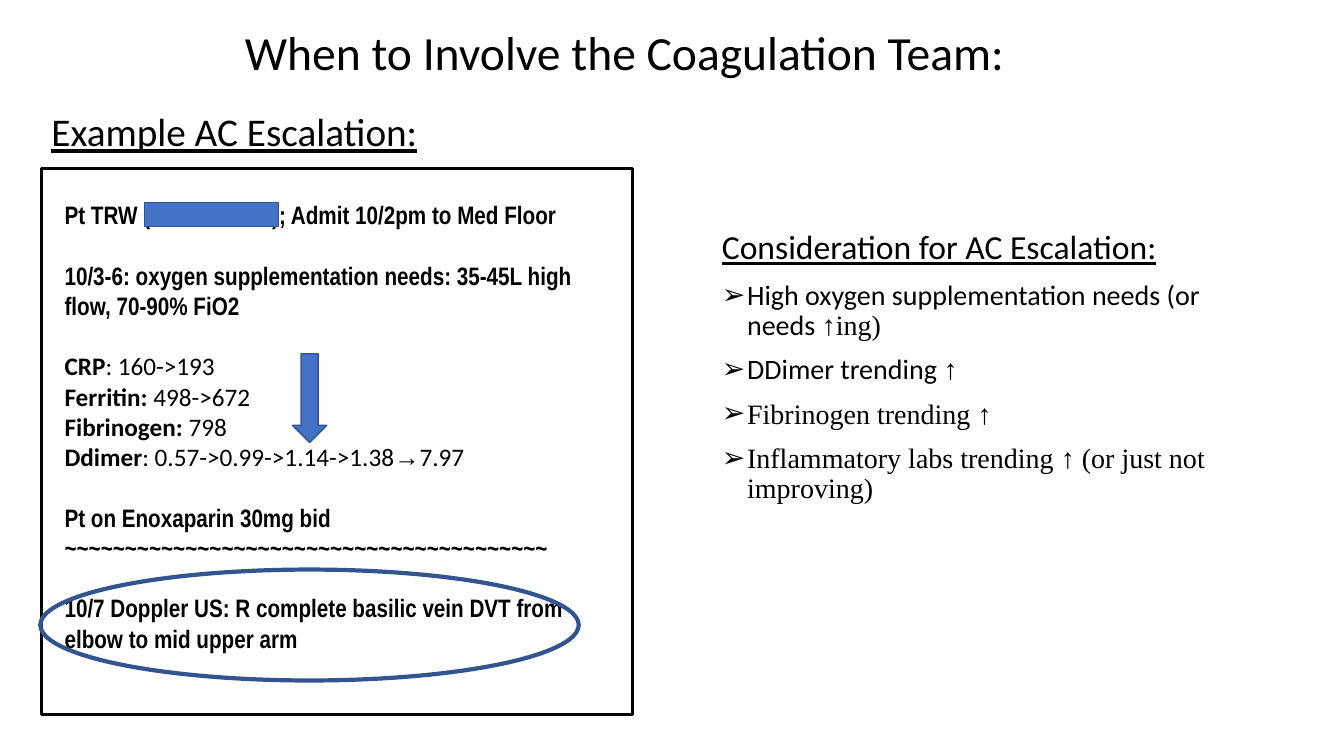
from dataclasses import dataclass

from lxml.etree import SubElement
from pptx import Presentation
from pptx.dml.color import RGBColor as RGB
from pptx.enum.shapes import MSO_SHAPE as SHAPE
from pptx.enum.text import MSO_ANCHOR as ANCHOR, MSO_AUTO_SIZE as AUTO, PP_ALIGN as ALIGN
from pptx.oxml.ns import qn
from pptx.util import Inches, Pt


@dataclass(frozen=True)
class Theme:
    ink: RGB = RGB(0, 0, 0)
    accent: RGB = RGB(0x44, 0x72, 0xC4)
    edge: RGB = RGB(0x32, 0x54, 0x91)
    sans: str = "Calibri"
    narrow: str = "Arial Narrow"
    arial: str = "Arial"
    serif: str = "Times New Roman"
    headline: int = 34
    title: int = 28
    subhead: int = 24
    bullet: int = 20
    note: int = 18


T = Theme()
WIDTH, HEIGHT = Inches(13.33), Inches(7.5)


@dataclass(frozen=True)
class Box:
    """Area in percent of the slide's width and height."""
    x: float
    y: float
    w: float
    h: float

    def inner(self, dx, dy, w, h):
        return Box(self.x + dx, self.y + dy, w, h)

    def emu(self):
        return (int(WIDTH * self.x / 100), int(HEIGHT * self.y / 100),
                int(WIDTH * self.w / 100), int(HEIGHT * self.h / 100))


# Helpers
def assign(obj, **values):
    for name, value in values.items():
        setattr(obj, name, value)


def move(sp, box):
    assign(sp, **dict(zip(("left", "top", "width", "height"), box.emu())))


def add_run(p, text, size, name=T.sans, **font):
    r = p.add_run()
    r.text = text
    assign(r.font, size=Pt(size), name=name, **font)
    r.font.color.rgb = T.ink


def add_text_box(s, box):
    sp = s.shapes.add_textbox(*box.emu())
    pad = Inches(0.05)
    assign(sp.text_frame, word_wrap=True, margin_left=pad, margin_right=pad,
           margin_top=pad, margin_bottom=pad)
    return sp.text_frame


def next_paragraph(tf, i):
    return tf.add_paragraph() if i else tf.paragraphs[0]


def set_bullet(p, char=None):
    indent = Inches(0.25) if char else 0
    pPr = p._p.get_or_add_pPr()
    pPr.set("marL", str(indent))
    pPr.set("indent", str(-indent))
    if char:
        SubElement(pPr, qn("a:buFont"), typeface=T.arial)
        SubElement(pPr, qn("a:buChar"), char=char)
    else:
        SubElement(pPr, qn("a:buNone"))


def add_mark(s, kind, box, line, weight, fill=None):
    sp = s.shapes.add_shape(kind, *box.emu())
    sp.shadow.inherit = False
    if fill is None:
        sp.fill.background()
    else:
        sp.fill.solid()
        sp.fill.fore_color.rgb = fill
    sp.line.color.rgb = line
    sp.line.width = Pt(weight)


# Headline across the top
def add_headline(s, box):
    p = add_text_box(s, box).paragraphs[0]
    add_run(p, "When to Involve the Coagulation Team:", T.headline)


# Title above the example
def add_title(s, box):
    sp = s.shapes.title
    move(sp, box)
    tf = sp.text_frame
    assign(tf, vertical_anchor=ANCHOR.TOP, margin_top=Inches(0.16), auto_size=AUTO.NONE)
    p = tf.paragraphs[0]
    assign(p, alignment=ALIGN.LEFT, line_spacing=0.9)
    add_run(p, "Example AC Escalation:", T.title, underline=True)


# Framed patient note: (starts a new block, runs of text, font, bold)
NOTE = [
    (False, [("Pt TRW (\t); Admit 10/2pm to Med Floor", T.narrow, True)]),
    (True, [("10/3-6: oxygen supplementation needs: 35-45L high flow, 70-90% FiO2",
             T.narrow, True)]),
    (True, [("CRP", T.sans, True), (": 160->193", T.sans, False)]),
    (False, [("Ferritin:", T.sans, True), (" 498->672", T.sans, False)]),
    (False, [("Fibrinogen:", T.sans, True), (" 798", T.sans, False)]),
    (False, [("Ddimer", T.sans, True), (": 0.57->0.99->1.14->1.38", T.sans, False),
             ("→", T.arial, False), ("7.97", T.sans, False)]),
    (True, [("Pt on Enoxaparin 30mg bid", T.narrow, True)]),
    (False, [("~" * 40, T.narrow, True)]),
    (True, [("10/7 Doppler US: R complete basilic vein DVT from elbow to mid upper arm",
             T.narrow, True)]),
]


def add_example(s, box):
    tf = add_text_box(s, box.inner(1.35, 3.47, 41.19, 61.47))
    for i, (new_block, runs) in enumerate(NOTE):
        p = next_paragraph(tf, i)
        p.space_before = Pt(21.6 if new_block else 0)
        for text, name, bold in runs:
            add_run(p, text, T.note, name, bold=bold)
    # Tab stop behind the covered patient number
    tabs = SubElement(tf.paragraphs[0]._p.get_or_add_pPr(), qn("a:tabLst"))
    SubElement(tabs, qn("a:tab"), pos=str(Inches(2.06)), algn="l")
    # Frame, trend arrow, finding ring and cover bar
    add_mark(s, SHAPE.RECTANGLE, box, T.ink, 2.25)
    add_mark(s, SHAPE.DOWN_ARROW, box.inner(18.68, 24.53, 2.55, 11.73), T.edge, 1, T.accent)
    add_mark(s, SHAPE.OVAL, box.inner(-0.08, 53.07, 40.06, 14.67), T.edge, 3)
    add_mark(s, SHAPE.RECTANGLE, box.inner(7.65, 4.53, 9.98, 3.2), T.edge, 1, T.accent)


# Considerations list on the right
CONSIDERATIONS = [
    [("High oxygen supplementation needs (or needs ", T.sans), ("↑ing)", T.serif)],
    [("DDimer trending ", T.sans), ("↑", T.serif)],
    [("Fibrinogen trending ↑", T.serif)],
    [("Inflammatory labs trending ↑ (or just not improving)", T.serif)],
]


def add_considerations(s, box):
    sp = s.placeholders[1]
    move(sp, box)
    tf = sp.text_frame
    tf.auto_size = AUTO.NONE
    heading = [("Consideration for AC Escalation:", T.sans)]
    for i, runs in enumerate([heading] + CONSIDERATIONS):
        p = next_paragraph(tf, i)
        assign(p, line_spacing=0.9, space_before=Pt(10))
        set_bullet(p, "➢" if i else None)
        for text, name in runs:
            add_run(p, text, T.bullet if i else T.subhead, name, underline=i == 0)


def main():
    prs = Presentation()
    assign(prs, slide_width=WIDTH, slide_height=HEIGHT)
    s = prs.slides.add_slide(prs.slide_layouts[1])
    add_title(s, Box(3.08, 12.8, 42.61, 15.87))
    add_considerations(s, Box(52.96, 29.87, 41.04, 53.87))
    add_example(s, Box(3.08, 22.27, 43.96, 72.27))
    add_headline(s, Box(17.85, 2.4, 60.9, 8.93))
    prs.save("out.pptx")


if __name__ == "__main__":
    main()
